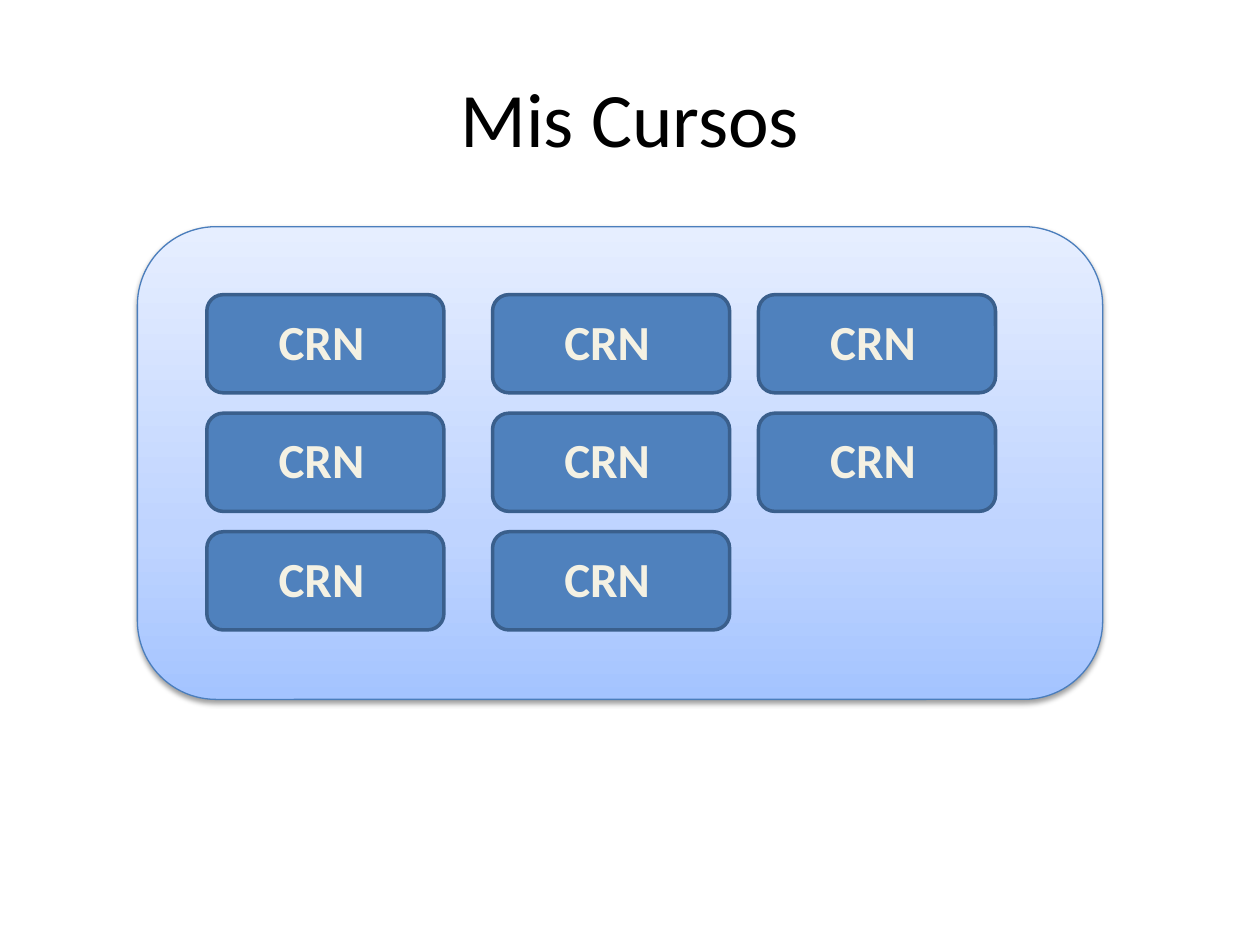
from copy import deepcopy
from lxml import etree
from pptx import Presentation, util as u
from pptx.dml.color import RGBColor
from pptx.enum import shapes, text
from pptx.oxml import ns

TITLE = "Mis Cursos"
COLS = [
    (4.17, ["CRN", "CRN", "CRN"]),
    (9.93, ["CRN", "CRN", "CRN"]),
    (15.29, ["CRN", "CRN"]),
]
TOP, STEP = 5.94, 2.39
CARD = (4.78, 1.98)
LABEL = (2.26, 1.45)
INSET = (1.18, 0.2)
PANEL = (2.77, 4.57, 19.46, 9.53)
GRAD = [(0, "A4C4FF"), (0.35, "BFD4FF"), (1, "E6EEFF")]


def rgb(code):
    return RGBColor.from_string(code)


def child(node, tag, **attrs):
    return etree.SubElement(node, ns.qn(tag), attrs)


def add_box(home, place, edge, width):
    box = home.add_shape(shapes.MSO_SHAPE.ROUNDED_RECTANGLE, *map(u.Cm, place))
    box.shadow.inherit = False
    box.line.color.rgb = rgb(edge)
    box.line.width = u.Pt(width)
    return box


def add_text(home, place, words, size, color, bold=False, wrap=True):
    box = home.add_textbox(*map(u.Cm, place))
    frame = box.text_frame
    frame.word_wrap = wrap
    frame.vertical_anchor = text.MSO_ANCHOR.MIDDLE
    line = frame.paragraphs[0]
    line.text = words
    line.alignment = text.PP_ALIGN.CENTER
    font = line.font
    font.name, font.size, font.bold = "Calibri", u.Pt(size), bold
    font.color.rgb = rgb(color)
    return box


def add_panel(home):
    box = add_box(home, PANEL, "4B7EBC", 0.75)
    fill = box.fill
    fill.gradient()
    fill.gradient_angle = 90
    props = box._element.spPr
    stops = props.find(ns.qn("a:gradFill")).find(ns.qn("a:gsLst"))
    stops.append(deepcopy(stops[-1]))
    for stop, (pos, color) in zip(fill.gradient_stops, GRAD):
        stop.position = pos
        stop.color.rgb = rgb(color)
    glow = child(props.find(ns.qn("a:effectLst")), "a:outerShdw",
                 blurRad=str(u.Pt(3.1)), dist=str(u.Pt(1.6)),
                 dir="5400000", rotWithShape="0")
    child(child(glow, "a:srgbClr", val="000000"), "a:alpha", val="38000")


def add_card(home, left, top, words):
    group = home.add_group_shape().shapes
    box = add_box(group, (left, top, *CARD), "3A5F8C", 2)
    box.fill.solid()
    box.fill.fore_color.rgb = rgb("4F81BD")
    label = add_text(group, (left + INSET[0], top + INSET[1], *LABEL),
                     words, 28, "F4F1E3", bold=True, wrap=False)
    frame = label.text_frame
    frame.auto_size = text.MSO_AUTO_SIZE.SHAPE_TO_FIT_TEXT
    style = frame.paragraphs[0]._p.pPr.find(ns.qn("a:defRPr"))
    edge = etree.Element(ns.qn("a:ln"), w=str(u.Pt(1)))
    child(child(edge, "a:solidFill"), "a:srgbClr", val="054697")
    style.insert(0, edge)


def main():
    deck = Presentation()
    deck.slide_width, deck.slide_height = u.Cm(25.4), u.Cm(19.05)
    home = deck.slides.add_slide(deck.slide_layouts[6]).shapes
    add_panel(home)
    add_text(home, (1.27, 0.76, 22.86, 3.18), TITLE, 44, "000000")
    for left, names in COLS:
        for row, name in enumerate(names):
            add_card(home, left, TOP + row * STEP, name)
    deck.save("out.pptx")


if __name__ == "__main__":
    main()
